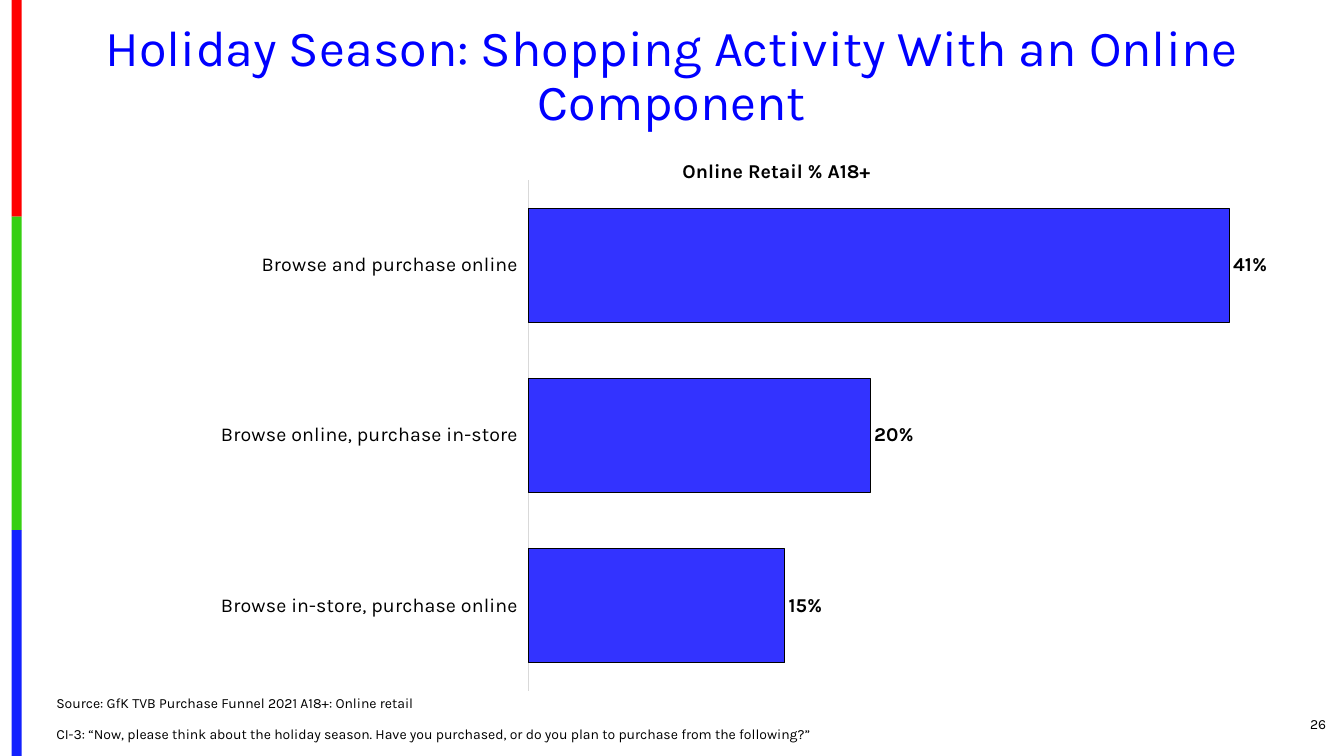
from lxml import etree
from pptx import Presentation
from pptx.chart.data import CategoryChartData
from pptx.dml.color import RGBColor
from pptx.enum.chart import XL_CHART_TYPE, XL_LABEL_POSITION, XL_TICK_LABEL_POSITION, XL_TICK_MARK
from pptx.enum.shapes import MSO_SHAPE
from pptx.enum.text import MSO_ANCHOR, PP_ALIGN
from pptx.oxml.ns import qn
from pptx.util import Inches, Pt

LEFT, CENTER, RIGHT = PP_ALIGN.LEFT, PP_ALIGN.CENTER, PP_ALIGN.RIGHT
TOP, MIDDLE, BOTTOM = MSO_ANCHOR.TOP, MSO_ANCHOR.MIDDLE, MSO_ANCHOR.BOTTOM
RECTANGLE = MSO_SHAPE.RECTANGLE
BAR_CLUSTERED = XL_CHART_TYPE.BAR_CLUSTERED
OUTSIDE_END = XL_LABEL_POSITION.OUTSIDE_END
NO_TICKS = XL_TICK_MARK.NONE
LABELS_LOW = XL_TICK_LABEL_POSITION.LOW

FONT = "Karla"
COLORS = {
    "text": "000000", "title": "0000FF", "bar": "3333FF", "axis": "D9D9D9",
    "red": "FE0000", "green": "36CF12", "blue": "1322FE",
}
SLIDE_W, SLIDE_H = Inches(13.33), Inches(7.5)

# Boxes are left, top, width, height in percent of the slide.
MARGIN, CONTENT_W = 3.45, 93.1
STRIPE_BOX = (0.86, 0, 0.75, 100)
TITLE_BOX = (MARGIN, 2.27, CONTENT_W, 15.87)
CHART_BOX = (MARGIN, 21.87, CONTENT_W, 71.6)
HEADING_BOX = (50.04, 20.4, 17.78, 4.53)
SOURCE_BOX = (MARGIN, 91.6, 70.9, 7.2)
PAGE_BOX = (91.3, 93.07, 8.1, 5.33)

STRIPE_BANDS = [("red", 28.67), ("green", 41.46), ("blue", 29.87)]
RETAIL_SHARES = [
    ("Browse in-store, purchase online", 0.15),
    ("Browse online, purchase in-store", 0.2),
    ("Browse and purchase online", 0.41),
]
PLOT_AREA = {"x": 0.385, "y": 0.028, "w": 0.615, "h": 0.943}


def color(name):
    return RGBColor.from_string(COLORS[name])


def place(box):
    """Turn a box in percent of the slide into lengths."""
    left, top, width, height = box
    return (int(SLIDE_W * left / 100), int(SLIDE_H * top / 100),
            int(SLIDE_W * width / 100), int(SLIDE_H * height / 100))


def style(font, size, tint="text", bold=False):
    font.name, font.size, font.bold = FONT, Pt(size), bold
    font.color.rgb = color(tint)


def add_text(slide, box, lines, size, align=LEFT, anchor=TOP, tint="text",
             bold=False, gap=0, spacing=None, wrap=True):
    frame = slide.shapes.add_textbox(*place(box)).text_frame
    frame.word_wrap = wrap
    frame.vertical_anchor = anchor
    for index, line in enumerate(lines):
        paragraph = frame.add_paragraph() if index else frame.paragraphs[0]
        paragraph.text = line
        paragraph.alignment = align
        if index:
            paragraph.space_before = Pt(gap)
        if spacing:
            paragraph.line_spacing = spacing
        style(paragraph.font, size, tint, bold)


def add_stripe(slide, box):
    left, top, width, height = box
    for tint, share in STRIPE_BANDS:
        band_height = height * share / 100
        band = slide.shapes.add_shape(RECTANGLE, *place((left, top, width, band_height)))
        band.shadow.inherit = False
        band.fill.solid()
        band.fill.fore_color.rgb = color(tint)
        band.line.fill.background()
        top += band_height


def fix_plot_area(chart):
    """Pin the inner plot area to its shares of the chart."""
    plot_area = chart.plots[0]._element.getparent()
    for old_layout in plot_area.findall(qn("c:layout")):
        plot_area.remove(old_layout)
    layout = etree.Element(qn("c:layout"))
    manual = etree.SubElement(layout, qn("c:manualLayout"))
    settings = [("layoutTarget", "inner"), ("xMode", "edge"), ("yMode", "edge"),
                *PLOT_AREA.items()]
    for tag, value in settings:
        etree.SubElement(manual, qn("c:" + tag)).set("val", str(value))
    plot_area.insert(0, layout)


def add_retail_chart(slide, box):
    data = CategoryChartData(number_format="0%")
    data.categories = [activity for activity, _ in RETAIL_SHARES]
    data.add_series("Series 1", [share for _, share in RETAIL_SHARES])
    chart = slide.shapes.add_chart(BAR_CLUSTERED, *place(box), data).chart
    chart.has_title = False
    chart.has_legend = False
    style(chart.font, 10)
    fix_plot_area(chart)

    activities = chart.category_axis
    activities.major_tick_mark = activities.minor_tick_mark = NO_TICKS
    activities.tick_label_position = LABELS_LOW
    activities.has_major_gridlines = False
    activities.format.line.color.rgb = color("axis")
    activities.format.line.width = Pt(0.75)
    style(activities.tick_labels.font, 14)

    shares = chart.value_axis
    shares.minimum_scale, shares.maximum_scale = 0, 0.45
    shares.has_major_gridlines = False
    shares.visible = False

    plot = chart.plots[0]
    plot.gap_width = 49
    plot.vary_by_categories = False
    bars = plot.series[0]
    bars.invert_if_negative = False
    bars.format.fill.solid()
    bars.format.fill.fore_color.rgb = color("bar")
    bars.format.line.color.rgb = color("text")
    bars.format.line.width = Pt(0.75)
    labels = bars.data_labels
    labels.show_value = True
    labels.number_format, labels.number_format_is_linked = "0%", False
    labels.position = OUTSIDE_END
    style(labels.font, 14, bold=True)


def main():
    deck = Presentation()
    deck.slide_width, deck.slide_height = SLIDE_W, SLIDE_H
    slide = deck.slides.add_slide(deck.slide_layouts[6])
    add_stripe(slide, STRIPE_BOX)
    add_text(slide, TITLE_BOX, ["Holiday Season: Shopping Activity With an Online Component"],
             36, CENTER, MIDDLE, "title", spacing=0.9)
    add_retail_chart(slide, CHART_BOX)
    add_text(slide, PAGE_BOX, ["26"], 10, RIGHT, MIDDLE)
    add_text(slide, SOURCE_BOX, [
        "Source: GfK TVB Purchase Funnel 2021 A18+: Online retail",
        "CI-3: “Now, please think about the holiday season. Have you purchased, "
        "or do you plan to purchase from the following?”",
    ], 10, anchor=BOTTOM, gap=10)
    add_text(slide, HEADING_BOX, ["Online Retail % A18+"], 14, bold=True, wrap=False)
    deck.save("out.pptx")


if __name__ == "__main__":
    main()
